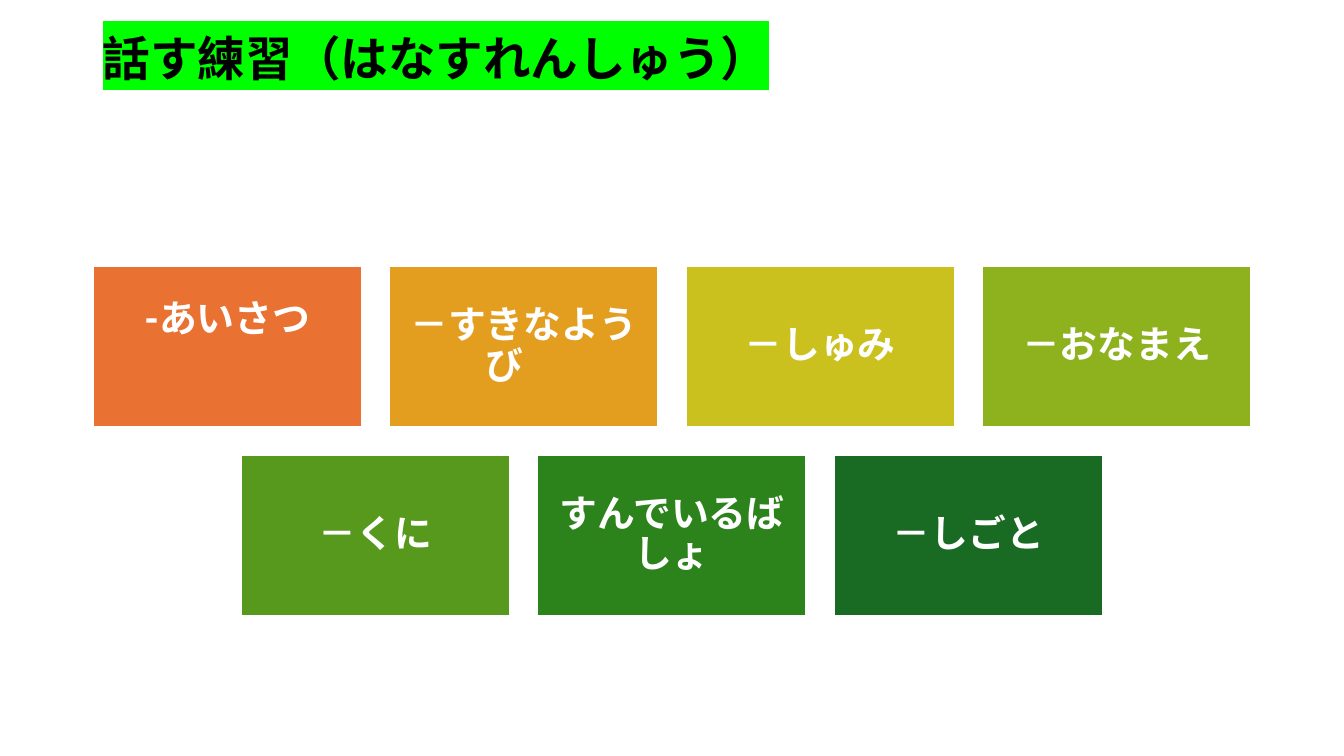
from dataclasses import dataclass

from lxml.etree import SubElement
from pptx import Presentation
from pptx.dml.color import RGBColor
from pptx.enum.shapes import MSO_SHAPE
from pptx.enum.text import MSO_ANCHOR, MSO_AUTO_SIZE, PP_ALIGN
from pptx.oxml.ns import qn
from pptx.slide import Slide
from pptx.text.text import _Paragraph
from pptx.util import Emu, Pt

FONT = "Roboto"
BLACK = RGBColor(0x00, 0x00, 0x00)
WHITE = RGBColor(0xFF, 0xFF, 0xFF)
LIME = RGBColor(0x00, 0xFF, 0x00)
ORANGE = RGBColor(0xE9, 0x71, 0x32)
AMBER = RGBColor(0xE3, 0x9D, 0x1F)
YELLOW = RGBColor(0xCB, 0xC1, 0x1E)
OLIVE = RGBColor(0x8E, 0xB2, 0x1E)
GRASS = RGBColor(0x56, 0x99, 0x1D)
GREEN = RGBColor(0x2C, 0x82, 0x1B)
FOREST = RGBColor(0x19, 0x6B, 0x24)

CARD_WIDTH, CARD_HEIGHT, GAP = 267, 160, 27
CARDS_LEFT, CARDS_TOP = 92, 264
INSET = 11


@dataclass(frozen=True)
class Topic:
    text: str
    color: RGBColor
    lift: int = 0


TOPIC_ROWS = [
    [
        Topic("-あいさつ", ORANGE, lift=52),
        Topic("－すきなようび　", AMBER),
        Topic("－しゅみ", YELLOW),
        Topic("－おなまえ", OLIVE),
    ],
    [
        Topic("－くに", GRASS),
        Topic("すんでいるばしょ", GREEN),
        Topic("－しごと", FOREST),
    ],
]


def px(length: int) -> Emu:
    return Emu(length * 9144)


def format_text(paragraph: _Paragraph, size: int, color: RGBColor, align: PP_ALIGN) -> None:
    paragraph.alignment = align
    paragraph.line_spacing = 0.9
    paragraph.font.name = FONT
    paragraph.font.size = Pt(size)
    paragraph.font.bold = True
    paragraph.font.color.rgb = color


def add_heading(slide: Slide, text: str) -> None:
    heading = slide.shapes.title
    heading.left, heading.top, heading.width, heading.height = px(92), px(35), px(1149), px(118)
    frame = heading.text_frame
    frame.text = text
    frame.auto_size = MSO_AUTO_SIZE.NONE
    frame.vertical_anchor = MSO_ANCHOR.TOP
    frame.margin_top = 0
    paragraph = frame.paragraphs[0]
    format_text(paragraph, 34, BLACK, PP_ALIGN.LEFT)
    run_properties = paragraph.runs[0].font._element
    highlight = SubElement(run_properties, qn("a:highlight"))
    SubElement(highlight, qn("a:srgbClr"), val=str(LIME))


def add_topic(slide: Slide, topic: Topic, left: int, top: int) -> None:
    card = slide.shapes.add_shape(
        MSO_SHAPE.RECTANGLE, px(left), px(top), px(CARD_WIDTH), px(CARD_HEIGHT)
    )
    card.shadow.inherit = False
    card.fill.solid()
    card.fill.fore_color.rgb = topic.color
    card.line.color.rgb = WHITE
    card.line.width = Pt(1.5)
    frame = card.text_frame
    frame.text = topic.text
    frame.word_wrap = True
    frame.vertical_anchor = MSO_ANCHOR.MIDDLE
    frame.margin_left = frame.margin_right = frame.margin_top = px(INSET)
    frame.margin_bottom = px(INSET + topic.lift)
    format_text(frame.paragraphs[0], 27, WHITE, PP_ALIGN.CENTER)


def main() -> None:
    presentation = Presentation()
    presentation.slide_width, presentation.slide_height = px(1333), px(750)
    slide = presentation.slides.add_slide(presentation.slide_layouts[5])
    add_heading(slide, "話す練習（はなすれんしゅう）")
    pitch = CARD_WIDTH + GAP
    columns = max(len(topics) for topics in TOPIC_ROWS)
    for row, topics in enumerate(TOPIC_ROWS):
        row_left = CARDS_LEFT + (columns - len(topics)) * pitch // 2
        for column, topic in enumerate(topics):
            add_topic(
                slide, topic, row_left + column * pitch, CARDS_TOP + row * (CARD_HEIGHT + GAP)
            )
    presentation.save("out.pptx")


if __name__ == "__main__":
    main()
